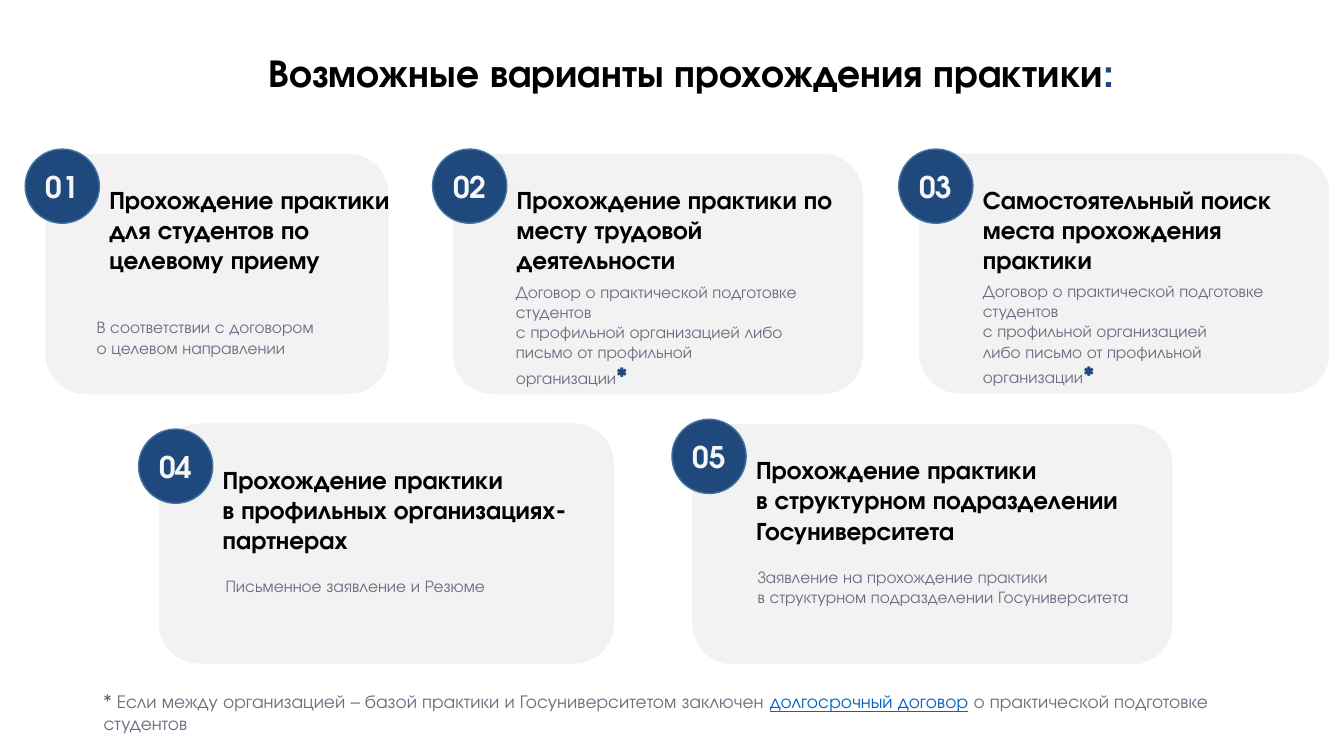
from pptx import Presentation
from pptx.dml.color import RGBColor
from pptx.enum.shapes import MSO_SHAPE
from pptx.enum.text import MSO_ANCHOR, MSO_AUTO_SIZE, PP_ALIGN
from pptx.util import Pt

FONT = "TeX Gyre Adventor"
BLACK, NAVY, GREY = "000000", "1F497D", "6E6C83"
BADGE = 53


def colour(value):
    return RGBColor.from_string(value)


def write(frame, paragraphs):
    """Fill a frame with paragraphs, each a list of (text, size, colour, bold)."""
    frame.word_wrap = True
    for index, spans in enumerate(paragraphs):
        para = frame.add_paragraph() if index else frame.paragraphs[0]
        for text, size, shade, bold in spans:
            span = para.add_run()
            span.text = text
            span.font.name = FONT
            span.font.size = Pt(size)
            span.font.bold = bold
            span.font.color.rgb = colour(shade)


deck = Presentation()
deck.slide_width, deck.slide_height = Pt(960), Pt(540)
page = deck.slides.add_slide(deck.slide_layouts[5])

# Title
title = page.shapes.title
title.left, title.top, title.width, title.height = Pt(42.5), Pt(34.5), Pt(903), Pt(73)
title.text_frame.auto_size = MSO_AUTO_SIZE.NONE
title.text_frame.vertical_anchor = MSO_ANCHOR.TOP
write(title.text_frame, [[
    ("Возможные варианты прохождения практики", 28, BLACK, True),
    (":", 28, NAVY, True),
]])
heading = title.text_frame.paragraphs[0]
heading.alignment = PP_ALIGN.CENTER
heading.line_spacing = 0.9
heading.space_before = Pt(10)

# Cards: badge (left, top), panel (top, width), heading width,
# note (left, top, width, height), heading lines, note lines, footnote mark
cards = [
    ((18, 106.5), (110, 245), 222, (62, 223, 216, 36),
     ["Прохождение практики", "для студентов по целевому приему"],
     ["В соответствии с договором", "о целевом направлении"], False),
    ((309, 106.5), (110, 293), 243, (361.5, 197.5, 216, 85),
     ["Прохождение практики по месту трудовой деятельности"],
     ["Договор о практической подготовке студентов",
      "с профильной организацией либо письмо от профильной организации"], True),
    ((642, 106.5), (109.5, 293), 243, (695, 197, 216, 85),
     ["Самостоятельный поиск места прохождения практики"],
     ["Договор о практической подготовке студентов",
      "с профильной организацией",
      "либо письмо от профильной организации"], True),
    ((99, 306.5), (302.5, 325), 269, (154, 408, 284, 22),
     ["Прохождение практики", "в профильных организациях-партнерах"],
     ["Письменное заявление и Резюме"], False),
    ((480, 299.5), (303, 343), 315, (534, 401, 292, 51),
     ["Прохождение практики", "в структурном подразделении Госуниверситета"],
     ["Заявление на прохождение практики",
      "в структурном подразделении Госуниверситета"], False),
]

for number, card in enumerate(cards, 1):
    (left, top), (panel_top, panel_width), heading_width, note_area, headings, notes, marked = card

    panel = page.shapes.add_shape(MSO_SHAPE.ROUNDED_RECTANGLE, Pt(left + 14.5),
                                  Pt(panel_top), Pt(panel_width), Pt(171.5))
    panel.shadow.inherit = False
    panel.fill.solid()
    panel.fill.fore_color.rgb = colour("F2F2F2")
    panel.line.fill.background()

    heading_box = page.shapes.add_textbox(Pt(left + BADGE), Pt(top + 21.5),
                                          Pt(heading_width), Pt(73))
    write(heading_box.text_frame, [[(line, 18, BLACK, True)] for line in headings])

    note_lines = [[(line, 12, GREY, False)] for line in notes]
    if marked:
        note_lines[-1].append(("*", 16, NAVY, True))
    note_box = page.shapes.add_textbox(*map(Pt, note_area))
    write(note_box.text_frame, note_lines)

    badge = page.shapes.add_shape(MSO_SHAPE.OVAL, Pt(left), Pt(top), Pt(BADGE), Pt(BADGE))
    badge.shadow.inherit = False
    badge.fill.solid()
    badge.fill.fore_color.rgb = colour(NAVY)
    badge.line.color.rgb = colour("43739E")
    badge.line.width = Pt(1)
    frame = badge.text_frame
    frame.margin_left = frame.margin_right = frame.margin_top = frame.margin_bottom = 0
    frame.vertical_anchor = MSO_ANCHOR.MIDDLE
    write(frame, [[(f"{number:02}", 21.3, "F6F6F6", True)]])
    frame.paragraphs[0].alignment = PP_ALIGN.CENTER

# Footnote
footnote = page.shapes.add_textbox(Pt(67), Pt(489), Pt(844), Pt(39.5))
write(footnote.text_frame, [[
    ("* Если между организацией – базой практики и Госуниверситетом заключен ",
     13.3, GREY, False),
    ("долгосрочный договор", 13.3, "0563C1", False),
    (" о практической подготовке студентов", 13.3, GREY, False),
]])
footnote.text_frame.paragraphs[0].runs[1].font.underline = True

deck.save("out.pptx")
